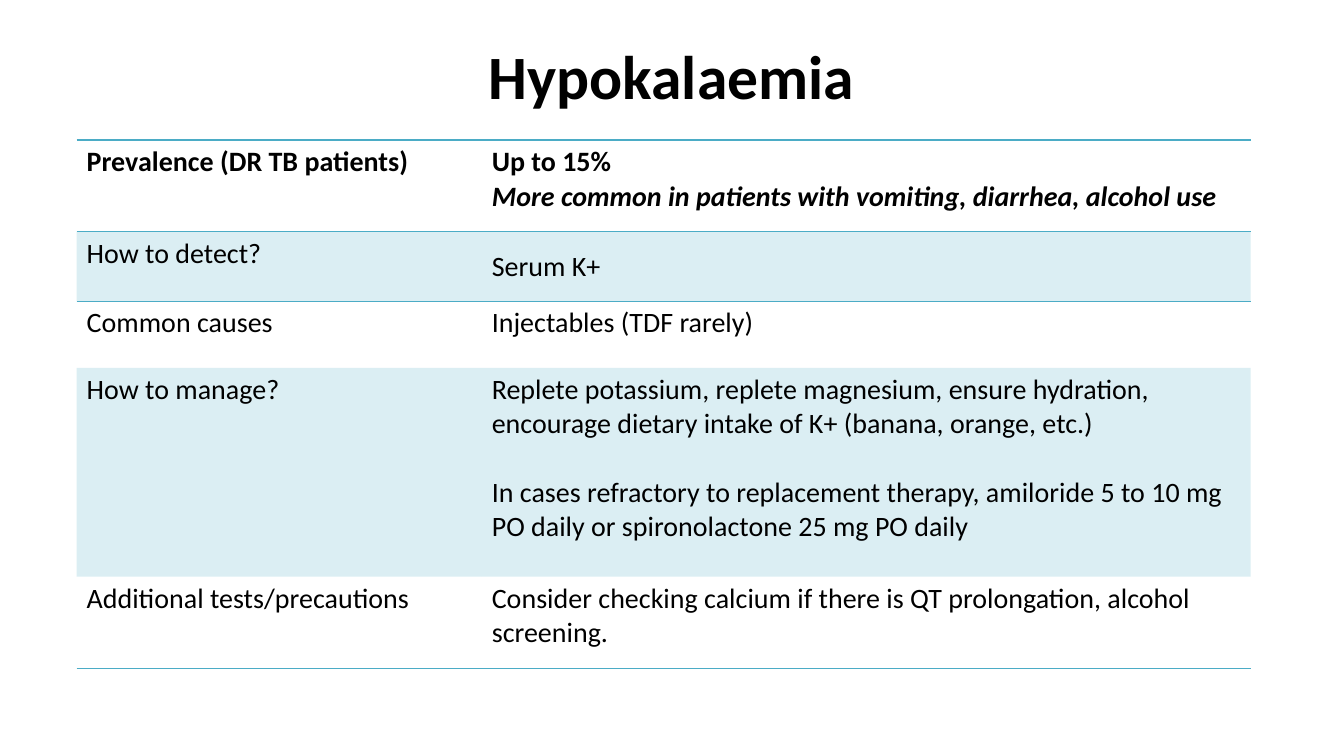
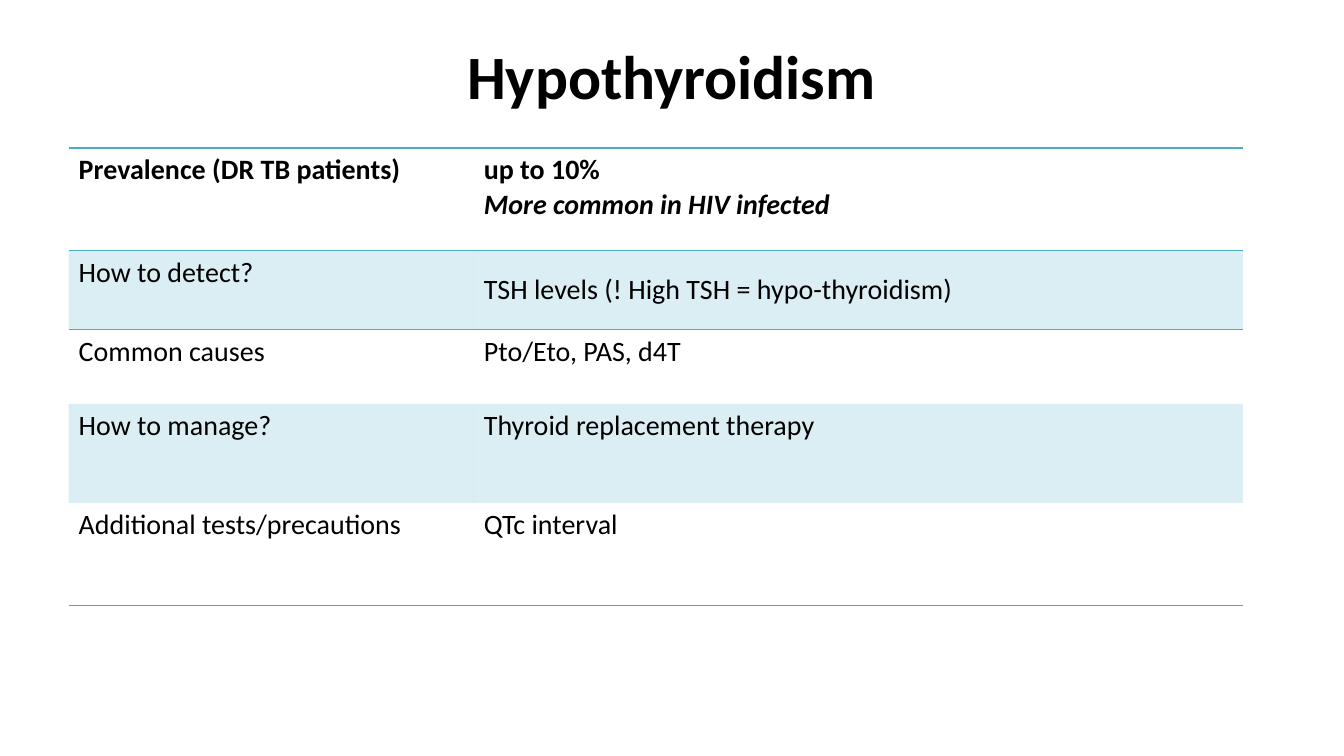
"""Build two slides that each sum up one adverse effect in a table."""

from dataclasses import dataclass

import lxml.etree
import pptx
import pptx.dml.color
import pptx.enum.text
import pptx.oxml.ns
import pptx.slide
import pptx.table
import pptx.text.text
import pptx.util

Cm = pptx.util.Cm
Pt = pptx.util.Pt
ANCHOR = pptx.enum.text.MSO_ANCHOR
ALIGN = pptx.enum.text.PP_ALIGN

COLOURS = {"text": "000000", "accent": "4BACC6"}
FONT = "Calibri"
NO_GRID_STYLE = "{2D5ABB26-0587-4C30-8999-92F81FD0307C}"
COLUMN_WIDTHS = (10.21, 19.38)
QUESTIONS = (
    "Prevalence (DR TB patients)",
    "How to detect?",
    "Common causes",
    "How to manage?",
    "Additional tests/precautions",
)
HEADING_ROW, DETECTION_ROW = 0, 1
RULED_EDGES = (0, 1, len(QUESTIONS))


@dataclass(frozen=True)
class Line:
    text: str
    italic: bool = False
    gap: float = 0


@dataclass(frozen=True)
class Condition:
    title: str
    left: float
    top: float
    row_heights: tuple[float, ...]
    answers: tuple[tuple[Line, ...], ...]


CONDITIONS = (
    Condition(
        "Hypokalaemia", 1.93, 3.53, (2.31, 1.75, 1.68, 5.26, 2.31),
        (
            (Line("Up to 15%"),
             Line("More common in patients with vomiting, diarrhea, alcohol use", italic=True)),
            (Line("Serum K+"),),
            (Line("Injectables (TDF rarely)"),),
            (Line("Replete potassium, replete magnesium, ensure hydration, "
                  "encourage dietary intake of K+ (banana, orange, etc.)"),
             Line("In cases refractory to replacement therapy, amiloride 5 to 10 mg "
                  "PO daily or spironolactone 25 mg PO daily", gap=24.4)),
            (Line("Consider checking calcium if there is QT prolongation, alcohol screening."),),
        ),
    ),
    Condition(
        "Hypothyroidism", 1.73, 3.73, (2.59, 1.98, 1.88, 2.49, 2.59),
        (
            (Line("up to 10%"), Line("More common in HIV infected", italic=True)),
            (Line("TSH levels (! High TSH = hypo-thyroidism)"),),
            (Line("Pto/Eto, PAS, d4T"),),
            (Line("Thyroid replacement therapy"),),
            (Line("QTc interval"),),
        ),
    ),
)


def write_text(frame: pptx.text.text.TextFrame, lines: tuple[Line, ...], *,
               size: float = 20, bold: bool = False,
               align: ALIGN = ALIGN.LEFT) -> None:
    frame.word_wrap = True
    for index, line in enumerate(lines):
        paragraph = frame.add_paragraph() if index else frame.paragraphs[0]
        paragraph.alignment = align
        if line.gap:
            paragraph.space_before = Pt(line.gap)
        run = paragraph.add_run()
        run.text = line.text
        run.font.name = FONT
        run.font.size = Pt(size)
        run.font.bold = bold
        run.font.italic = line.italic
        run.font.color.rgb = pptx.dml.color.RGBColor.from_string(COLOURS["text"])


def add_colour(parent: lxml.etree.ElementBase, opacity: int = 100) -> None:
    qn = pptx.oxml.ns.qn
    fill = lxml.etree.SubElement(parent, qn("a:solidFill"))
    colour = lxml.etree.SubElement(fill, qn("a:srgbClr"), val=COLOURS["accent"])
    if opacity < 100:
        lxml.etree.SubElement(colour, qn("a:alpha"), val=str(opacity * 1000))


def style_cell(cell: pptx.table._Cell, row: int) -> None:
    properties = cell._tc.get_or_add_tcPr()
    for tag, edge in (("a:lnT", row), ("a:lnB", row + 1)):
        if edge in RULED_EDGES:
            rule = lxml.etree.SubElement(
                properties, pptx.oxml.ns.qn(tag), w=str(Pt(1)))
            add_colour(rule)
    if row % 2:
        add_colour(properties, opacity=20)
    else:
        cell.fill.background()


def add_title(slide: pptx.slide.Slide, title: str) -> None:
    box = slide.shapes.add_textbox(Cm(4.23), Cm(0.83), Cm(25.4), Cm(2.2))
    write_text(box.text_frame, (Line(title),), size=44, bold=True, align=ALIGN.CENTER)


def add_summary(slide: pptx.slide.Slide, condition: Condition) -> None:
    table = slide.shapes.add_table(
        len(QUESTIONS), len(COLUMN_WIDTHS), Cm(condition.left), Cm(condition.top),
        Cm(sum(COLUMN_WIDTHS)), Cm(sum(condition.row_heights))).table
    table.first_row = table.horz_banding = False
    table._tbl.tblPr.find(pptx.oxml.ns.qn("a:tableStyleId")).text = NO_GRID_STYLE
    for column, width in zip(table.columns, COLUMN_WIDTHS):
        column.width = Cm(width)
    for row, (question, answer) in enumerate(zip(QUESTIONS, condition.answers)):
        table.rows[row].height = Cm(condition.row_heights[row])
        for column, lines in enumerate(((Line(question),), answer)):
            cell = table.cell(row, column)
            style_cell(cell, row)
            write_text(cell.text_frame, lines, bold=row == HEADING_ROW)
    table.cell(DETECTION_ROW, 1).vertical_anchor = ANCHOR.MIDDLE


def main() -> None:
    deck = pptx.Presentation()
    deck.slide_width, deck.slide_height = Cm(33.87), Cm(19.05)
    blank = deck.slide_layouts[6]
    for condition in CONDITIONS:
        slide = deck.slides.add_slide(blank)
        add_title(slide, condition.title)
        add_summary(slide, condition)
    deck.save("out.pptx")


if __name__ == "__main__":
    main()
